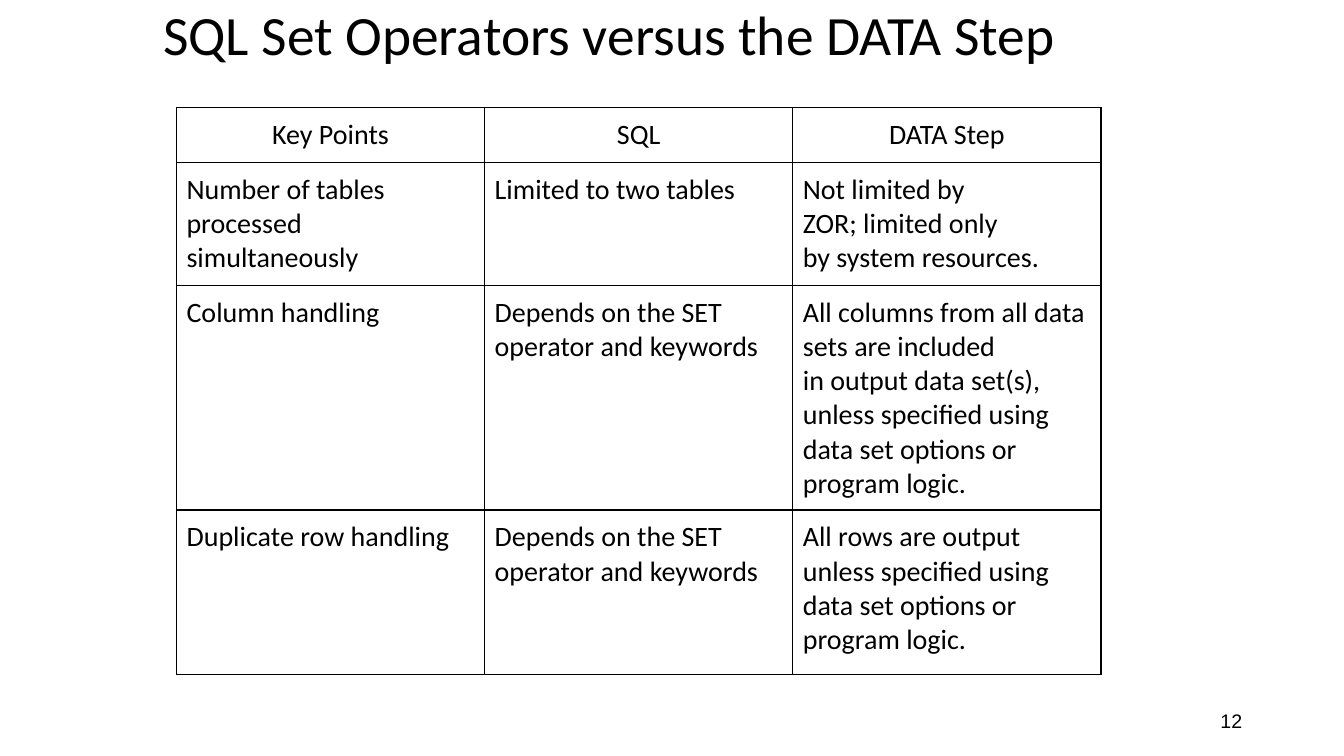
"""Build a slide comparing SQL set operators with the DATA step."""
import pptx
import pptx.util
import pptx.dml.color
import pptx.enum.text
import pptx.oxml
import pptx.oxml.ns

Inches, Pt = pptx.util.Inches, pptx.util.Pt
ALIGN = pptx.enum.text.PP_ALIGN
COLORS = {"ink": "000000"}
TITLE = "SQL Set Operators versus the DATA Step"
PAGE = "12"
ROWS = [
    ("Key Points", "SQL", "DATA Step"),
    ("Number of tables processed simultaneously", "Limited to two tables",
     "Not limited by \nZOR; limited only \nby system resources."),
    ("Column handling", "Depends on the SET operator and keywords",
     "All columns from all data sets are included \nin output data set(s), "
     "unless specified using data set options or program logic."),
    ("Duplicate row handling", "Depends on the SET operator and keywords",
     "All rows are output unless specified using data set options or program logic."),
]
ROW_HEIGHTS = [0.54, 1.22, 2.23, 1.63]
TABLE_LEFT, TABLE_TOP, TABLE_WIDTH = 1.75, 1.07, 9.17


def write(p, text, size, font, align=ALIGN.LEFT):
    p.text = text
    p.alignment = align
    for r in p.runs:
        r.font.size = Pt(size)
        r.font.name = font
        r.font.color.rgb = pptx.dml.color.RGBColor.from_string(COLORS["ink"])


def add_text(s, box, text, size, font, align=ALIGN.LEFT):
    tf = s.shapes.add_textbox(*map(Inches, box)).text_frame
    tf.word_wrap = True
    tf.vertical_anchor = pptx.enum.text.MSO_ANCHOR.MIDDLE
    write(tf.paragraphs[0], text, size, font, align)
    return tf.paragraphs[0]


def add_borders(cell):
    tc_pr = cell._tc.get_or_add_tcPr()
    for side in ("lnL", "lnR", "lnT", "lnB"):
        tc_pr.append(pptx.oxml.parse_xml(
            f'<a:{side} {pptx.oxml.ns.nsdecls("a")} w="{Pt(1)}"><a:solidFill>'
            f'<a:srgbClr val="{COLORS["ink"]}"/></a:solidFill></a:{side}>'))


def add_comparison(s):
    table = s.shapes.add_table(
        len(ROWS), len(ROWS[0]), Inches(TABLE_LEFT), Inches(TABLE_TOP),
        Inches(TABLE_WIDTH), Inches(sum(ROW_HEIGHTS))).table
    table.first_row = table.horz_banding = False
    for i, (row, height) in enumerate(zip(ROWS, ROW_HEIGHTS)):
        table.rows[i].height = Inches(height)
        for j, text in enumerate(row):
            cell = table.cell(i, j)
            cell.margin_left = cell.margin_right = Inches(0.1)
            cell.margin_top = cell.margin_bottom = Inches(0.1)
            add_borders(cell)
            cell.fill.background()
            p = cell.text_frame.paragraphs[0]
            write(p, text, 20, "Calibri", ALIGN.LEFT if i else ALIGN.CENTER)
            p.space_before = Pt(4)


def main():
    prs = pptx.Presentation()
    prs.slide_width, prs.slide_height = Inches(13.33), Inches(7.5)
    s = prs.slides.add_slide(prs.slide_layouts[6])
    add_text(s, (1.52, 0, 10.07, 0.75), TITLE, 39.6, "Calibri").line_spacing = 0.9
    add_text(s, (9.42, 6.95, 3, 0.4), PAGE, 14, "Arial", ALIGN.RIGHT)
    add_comparison(s)
    prs.save("out.pptx")


if __name__ == "__main__":
    main()
